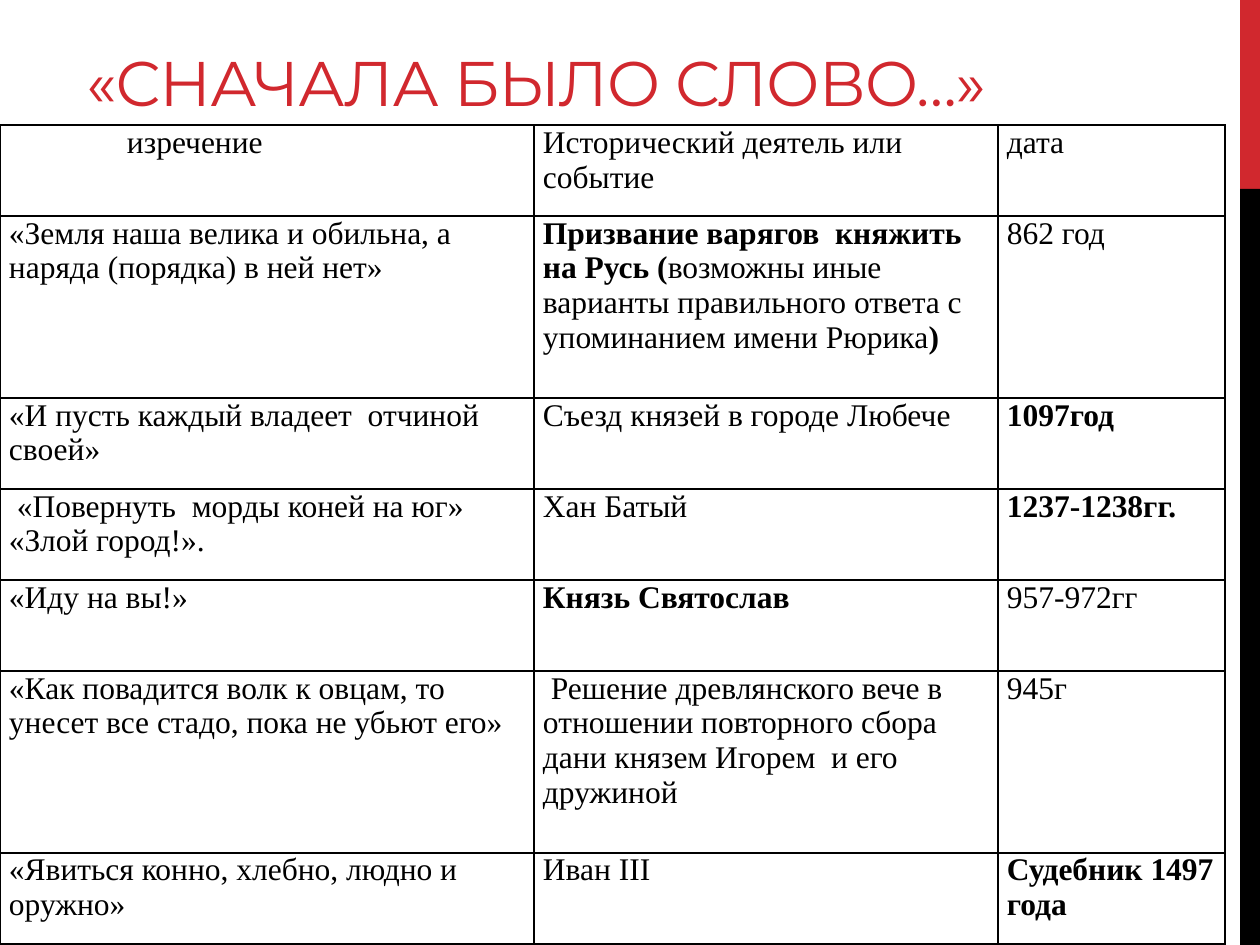
from pptx import Presentation
from pptx.dml.color import RGBColor
from pptx.enum.shapes import MSO_SHAPE
from pptx.enum.text import MSO_ANCHOR
from pptx.oxml import parse_xml
from pptx.oxml.ns import nsdecls
from pptx.util import Emu, Pt

RED = RGBColor(0xD1, 0x28, 0x2E)
BLACK = RGBColor(0, 0, 0)
RECT = MSO_SHAPE.RECTANGLE
BOTTOM = MSO_ANCHOR.BOTTOM

TITLE = "«СНАЧАЛА БЫЛО СЛОВО…»"
# A cell is a list of (text, bold) runs.
ROWS = [
    [[("изречение", False)],
     [("Исторический деятель или событие", False)],
     [("дата", False)]],
    [[("«Земля наша велика и обильна, а наряда (порядка) в ней нет»", False)],
     [("Призвание варягов  княжить на Русь (", True),
      ("возможны иные варианты правильного ответа с упоминанием имени Рюрика", False),
      (")", True)],
     [("862 год", False)]],
    [[("«И пусть каждый владеет  отчиной своей»", False)],
     [("Съезд князей в городе Любече", False)],
     [("1097год", True)]],
    [[(" «Повернуть  морды коней на юг» «Злой город!».", False)],
     [("Хан Батый", False)],
     [("1237-1238гг.", True)]],
    [[("«Иду на вы!»", False)],
     [("Князь Святослав", True)],
     [("957-972гг", False)]],
    [[("«Как повадится волк к овцам, то унесет все стадо, пока не убьют его»", False)],
     [(" Решение древлянского вече в отношении повторного сбора дани князем Игорем  и его дружиной",
       False)],
     [("945г", False)]],
    [[("«Явиться конно, хлебно, людно и оружно»", False)],
     [("Иван III", False)],
     [("Судебник 1497 года", True)]],
]
COL_WIDTHS = [534, 464, 227]
ROW_HEIGHTS = [91, 182, 91, 91, 91, 182, 91]
TABLE_TOP = 125
CELL_INSET = 9
HEADER_INDENT = 118
SIDE_BARS = [(0, 189, RED), (189, 756, BLACK)]  # top, height, colour


def px(n):
    return Emu(round(n * 914400 / 126))


def add_bar(slide, top, height, color):
    s = slide.shapes.add_shape(RECT, px(1240), px(top), px(20), px(height))
    s.shadow.inherit = False
    s.fill.solid()
    s.fill.fore_color.rgb = color
    s.line.fill.background()


def add_title(slide):
    tf = slide.shapes.add_textbox(px(74), 0, px(1043), px(TABLE_TOP)).text_frame
    tf.word_wrap = True
    tf.vertical_anchor = BOTTOM
    p = tf.paragraphs[0]
    r = p.add_run()
    r.text = TITLE
    p.font.name, p.font.size, p.font.color.rgb = "Montserrat", Pt(36), RED
    r.font.name, r.font.size, r.font.color.rgb = "Montserrat", Pt(36), RED
    r.font._element.set("spc", "-60")


def add_borders(cell):
    """Put a thin black line on all four sides, ahead of the cell's fill."""
    tc_pr = cell._tc.get_or_add_tcPr()
    for i, side in enumerate(("lnL", "lnR", "lnT", "lnB")):
        tc_pr.insert(i, parse_xml(
            f'<a:{side} {nsdecls("a")} w="{Pt(1)}"><a:solidFill>'
            f'<a:srgbClr val="{BLACK}"/></a:solidFill></a:{side}>'))


def fill_cell(cell, runs):
    cell.fill.background()
    cell.margin_left = cell.margin_right = px(CELL_INSET)
    cell.margin_top = cell.margin_bottom = 0
    add_borders(cell)
    p = cell.text_frame.paragraphs[0]
    for text, bold in runs:
        r = p.add_run()
        r.text = text
        f = r.font
        f.name, f.size, f.bold = "Times New Roman", Pt(18), bold
        f.color.rgb = BLACK


def add_sayings_table(slide):
    table = slide.shapes.add_table(
        len(ROWS), len(COL_WIDTHS), 0, px(TABLE_TOP),
        px(sum(COL_WIDTHS)), px(sum(ROW_HEIGHTS))).table
    table.first_row = table.horz_banding = False
    for column, width in zip(table.columns, COL_WIDTHS):
        column.width = px(width)
    for row, height, cells in zip(table.rows, ROW_HEIGHTS, ROWS):
        row.height = px(height)
        for cell, runs in zip(row.cells, cells):
            fill_cell(cell, runs)
    table.cell(0, 0).margin_left = px(CELL_INSET + HEADER_INDENT)


def main():
    prs = Presentation()
    prs.slide_width, prs.slide_height = px(1260), px(945)
    slide = prs.slides.add_slide(prs.slide_layouts[6])
    for bar in SIDE_BARS:
        add_bar(slide, *bar)
    add_title(slide)
    add_sayings_table(slide)
    prs.save("out.pptx")


if __name__ == "__main__":
    main()
